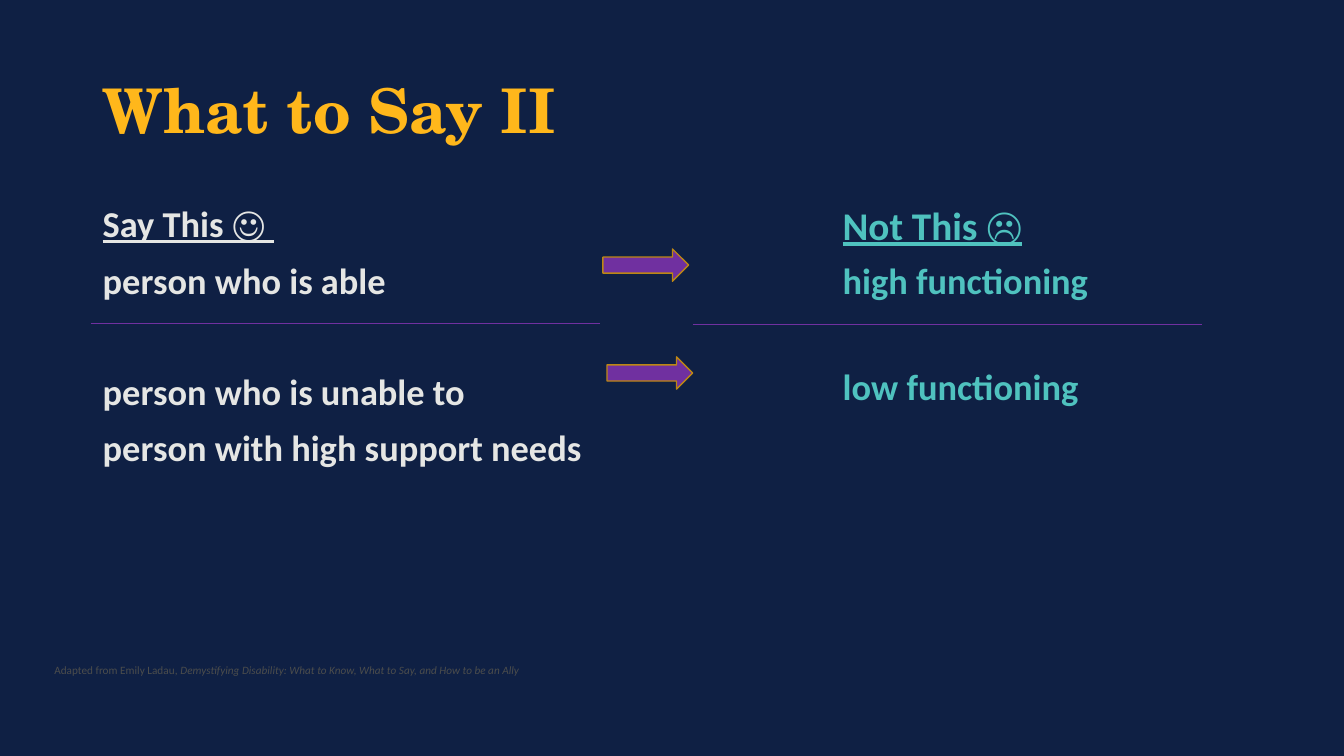
from lxml.etree import SubElement
from pptx import Presentation
from pptx.dml.color import RGBColor
from pptx.enum.shapes import MSO_CONNECTOR, MSO_SHAPE
from pptx.enum.text import MSO_ANCHOR
from pptx.oxml.ns import qn
from pptx.util import Inches, Pt

COLORS = {
    "navy": "0F2044",
    "gold": "FFB71B",
    "light": "E5E6E4",
    "teal": "4FC2BF",
    "purple": "7030A0",
    "bronze": "BD8714",
    "gray": "4C4D4C",
}


def rgb(name):
    return RGBColor.from_string(COLORS[name])


def add_words(paragraph, words, color, **formats):
    run = paragraph.add_run()
    run.text = words
    run.font.color.rgb = rgb(color)
    for attribute, value in formats.items():
        setattr(run.font, attribute, value)


def add_frame(slide, left, top, width, height, anchor=MSO_ANCHOR.TOP):
    box = slide.shapes.add_textbox(
        Inches(left), Inches(top), Inches(width), Inches(height))
    frame = box.text_frame
    frame.word_wrap = True
    frame.vertical_anchor = anchor
    frame.paragraphs[0].line_spacing = 0.9
    return frame


def add_title(slide, left, top, width, height):
    frame = add_frame(slide, left, top, width, height, MSO_ANCHOR.MIDDLE)
    add_words(frame.paragraphs[0], "What to Say II", "gold",
              name="TeX Gyre Schola", size=Pt(44), bold=True)


def add_phrases(slide, left, top, width, height, heading, heading_size, color, phrases):
    frame = add_frame(slide, left, top, width, height)
    add_words(frame.paragraphs[0], heading, color, name="Calibri",
              size=Pt(heading_size), bold=True, underline=True)
    for phrase, gap in phrases:
        paragraph = frame.add_paragraph()
        paragraph.line_spacing = 0.9
        paragraph.space_before = Pt(gap)
        add_words(paragraph, phrase, color, name="Calibri", size=Pt(26), bold=True)


def add_arrow(slide, left, top, width, height):
    arrow = slide.shapes.add_shape(
        MSO_SHAPE.RIGHT_ARROW, Inches(left), Inches(top), Inches(width), Inches(height))
    arrow.shadow.inherit = False
    arrow.fill.solid()
    arrow.fill.fore_color.rgb = rgb("purple")
    arrow.line.color.rgb = rgb("bronze")
    arrow.line.width = Pt(1)


def add_divider(slide, left, top, width):
    divider = slide.shapes.add_connector(
        MSO_CONNECTOR.STRAIGHT, Inches(left), Inches(top), Inches(left + width), Inches(top))
    divider.line.color.rgb = rgb("purple")
    divider.line.width = Pt(0.5)
    SubElement(divider._element.spPr, qn("a:effectLst"))


def add_credit(slide, left, top, width, height):
    credit = add_frame(slide, left, top, width, height).paragraphs[0]
    for words, italic in (
        ("Adapted from Emily Ladau", False),
        (", Demystifying Disability: What to Know, What to Say, and How to be an Ally", True),
    ):
        add_words(credit, words, "gray", name="Calibri", size=Pt(8), italic=italic)


def main():
    deck = Presentation()
    deck.slide_width, deck.slide_height = Inches(13.33), Inches(7.5)
    slide = deck.slides.add_slide(deck.slide_layouts[6])
    slide.background.fill.solid()
    slide.background.fill.fore_color.rgb = rgb("navy")

    add_title(slide, 0.92, 0.4, 11.5, 1.45)
    add_phrases(slide, 0.92, 2, 6.51, 4.76, "Say This ☺ ", 26, "light", (
        ("person who is able", 12),
        ("person who is unable to", 51.5),
        ("person with high support needs", 12),
    ))
    add_phrases(slide, 8.26, 2, 4.64, 4.76, "Not This ☹", 28, "teal", (
        ("high functioning", 10),
        ("low functioning", 47.5),
    ))
    for left, top in ((5.98, 2.47), (6.02, 3.54)):
        add_arrow(slide, left, top, 0.85, 0.32)
    for left, top in ((0.9, 3.21), (6.87, 3.22)):
        add_divider(slide, left, top, 5.05)
    add_credit(slide, 0.44, 6.55, 11.65, 0.22)
    deck.save("out.pptx")


if __name__ == "__main__":
    main()
